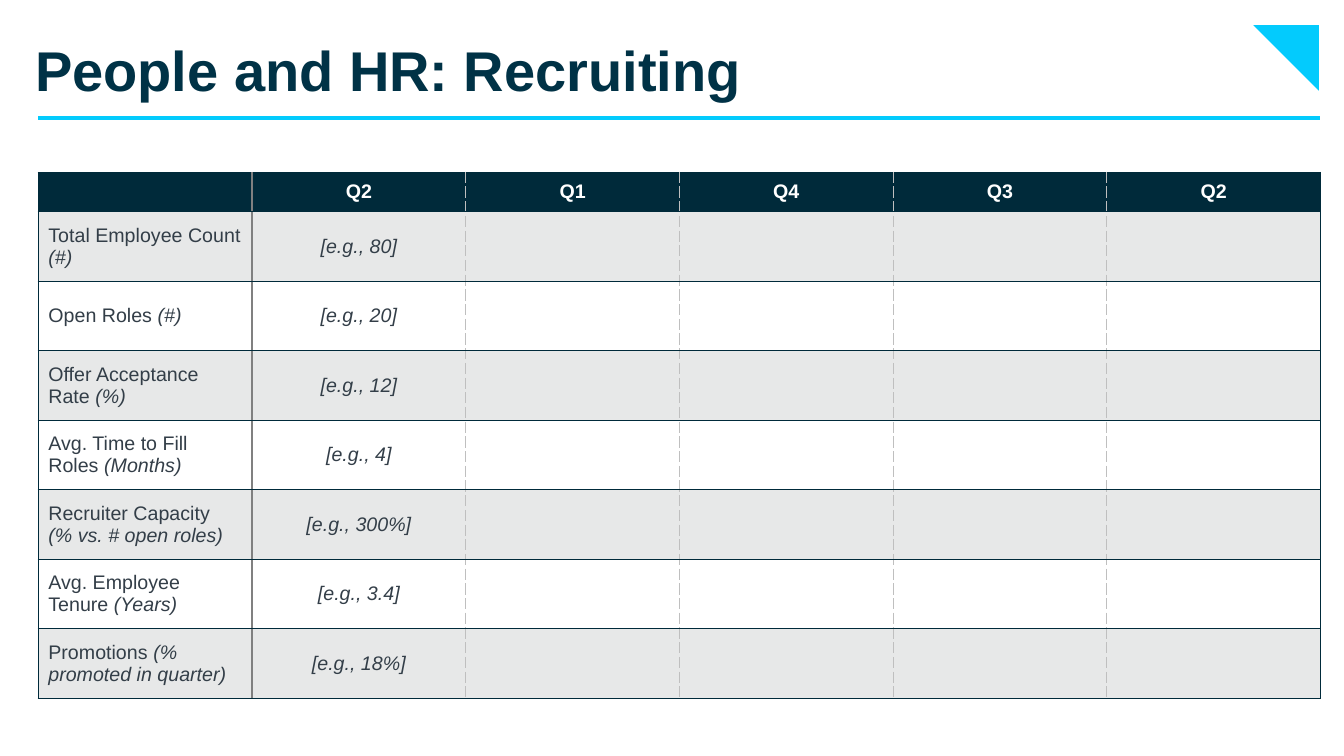
from lxml.etree import SubElement
from pptx import Presentation
from pptx.dml.color import RGBColor
from pptx.enum.shapes import MSO_CONNECTOR as Connector, MSO_SHAPE as Shape
from pptx.enum.text import MSO_ANCHOR as Anchor, PP_ALIGN as Align
from pptx.oxml import parse_xml
from pptx.oxml.ns import nsdecls, qn
from pptx.util import Inches, Pt

TITLE = "People and HR: Recruiting"
QUARTERS = ["Q2", "Q1", "Q4", "Q3", "Q2"]
# measure, unit, example, unit on its own line
METRICS = [
    ("Total Employee Count", "(#)", "[e.g., 80]", False),
    ("Open Roles", "(#)", "[e.g., 20]", False),
    ("Offer Acceptance Rate", "(%)", "[e.g., 12]", False),
    ("Avg. Time to Fill Roles", "(Months)", "[e.g., 4]", False),
    ("Recruiter Capacity", "(% vs. # open roles)", "[e.g., 300%]", True),
    ("Avg. Employee Tenure", "(Years)", "[e.g., 3.4]", False),
    ("Promotions", "(% promoted in quarter)", "[e.g., 18%]", False),
]

FONT = "Arial"
CYAN = RGBColor(0x03, 0xCB, 0xFD)
TITLE_NAVY = RGBColor(0x00, 0x32, 0x46)
NAVY = RGBColor(0x00, 0x2A, 0x3A)
SLATE = RGBColor(0x33, 0x3E, 0x48)
MID_GREY = RGBColor(0x80, 0x80, 0x80)
LIGHT_GREY = RGBColor(0xBF, 0xBF, 0xBF)
BAND = RGBColor(0xE7, 0xE8, 0xE8)
WHITE = RGBColor(0xFF, 0xFF, 0xFF)

LEFT, RIGHT = 0.38, 13.09
TABLE_TOP, COLUMN_WIDTH = 1.71, 2.12
HEADER_HEIGHT, ROW_HEIGHT = 0.39, 0.69


def add_span(para, text, size, color, bold=False, italic=False):
    span = para.add_run()
    span.text = text
    font = span.font
    font.name, font.size, font.bold, font.italic = FONT, Pt(size), bold, italic
    font.color.rgb = color


def set_borders(cell, column):
    """Navy outer edges, solid grey after the labels, dashed between quarters."""
    last = len(QUARTERS)
    navy, solid, dashed = (NAVY, "solid"), (MID_GREY, "solid"), (LIGHT_GREY, "lgDash")
    verticals = [navy, solid] + [dashed] * (last - 1) + [navy]
    sides = {"L": verticals[column], "R": verticals[column + 1], "T": navy, "B": navy}
    properties = cell._tc.get_or_add_tcPr()
    for place, (side, (color, dash)) in enumerate(sides.items()):
        properties.insert(place, parse_xml(
            f'<a:ln{side} {nsdecls("a")} w="12700"><a:solidFill><a:srgbClr val="{color}"/>'
            f'</a:solidFill><a:prstDash val="{dash}"/></a:ln{side}>'))


def add_heading(page):
    corner = page.shapes.add_shape(
        Shape.RIGHT_TRIANGLE, Inches(12.43), Inches(0.25), Inches(0.65), Inches(0.65))
    corner.rotation = 180
    corner.shadow.inherit = False
    corner.fill.solid()
    corner.fill.fore_color.rgb = CYAN
    corner.line.fill.background()

    box = page.shapes.add_textbox(Inches(0.25), Inches(0.25), Inches(12.84), Inches(1.18))
    frame = box.text_frame
    frame.word_wrap = True
    frame.margin_top = frame.margin_bottom = Inches(0.1)
    add_span(frame.paragraphs[0], TITLE, 40, TITLE_NAVY, bold=True)

    rule = page.shapes.add_connector(
        Connector.STRAIGHT, Inches(LEFT), Inches(1.17), Inches(RIGHT), Inches(1.17))
    rule.line.color.rgb = CYAN
    rule.line.width = Pt(3)
    SubElement(rule._element.spPr, qn("a:effectLst"))


def add_metrics_table(page):
    rows, columns = len(METRICS) + 1, len(QUARTERS) + 1
    heights = [HEADER_HEIGHT] + [ROW_HEIGHT] * len(METRICS)
    table = page.shapes.add_table(
        rows, columns, Inches(LEFT), Inches(TABLE_TOP),
        Inches(COLUMN_WIDTH * columns), Inches(sum(heights))).table
    table.first_row = table.horz_banding = False
    for column in table.columns:
        column.width = Inches(COLUMN_WIDTH)

    for r, height in enumerate(heights):
        table.rows[r].height = Inches(height)
        for c in range(columns):
            cell = table.cell(r, c)
            cell.vertical_anchor = Anchor.MIDDLE
            cell.margin_top = cell.margin_bottom = Inches(0.03)
            cell.fill.solid()
            cell.fill.fore_color.rgb = NAVY if r == 0 else BAND if r % 2 else WHITE
            set_borders(cell, c)
            if c:
                cell.text_frame.paragraphs[0].alignment = Align.CENTER

    for c, quarter in enumerate(QUARTERS, 1):
        add_span(table.cell(0, c).text_frame.paragraphs[0], quarter, 14, WHITE, bold=True)
    for r, (measure, unit, example, own_line) in enumerate(METRICS, 1):
        label = table.cell(r, 0).text_frame
        para = label.paragraphs[0]
        add_span(para, measure if own_line else measure + " ", 14, SLATE)
        if own_line:
            para = label.add_paragraph()
        add_span(para, unit, 14, SLATE, italic=True)
        add_span(table.cell(r, 1).text_frame.paragraphs[0], example, 14, SLATE, italic=True)


def main():
    deck = Presentation()
    deck.slide_width, deck.slide_height = Inches(13.33), Inches(7.5)
    page = deck.slides.add_slide(deck.slide_layouts[6])
    add_heading(page)
    add_metrics_table(page)
    deck.save("out.pptx")


if __name__ == "__main__":
    main()
